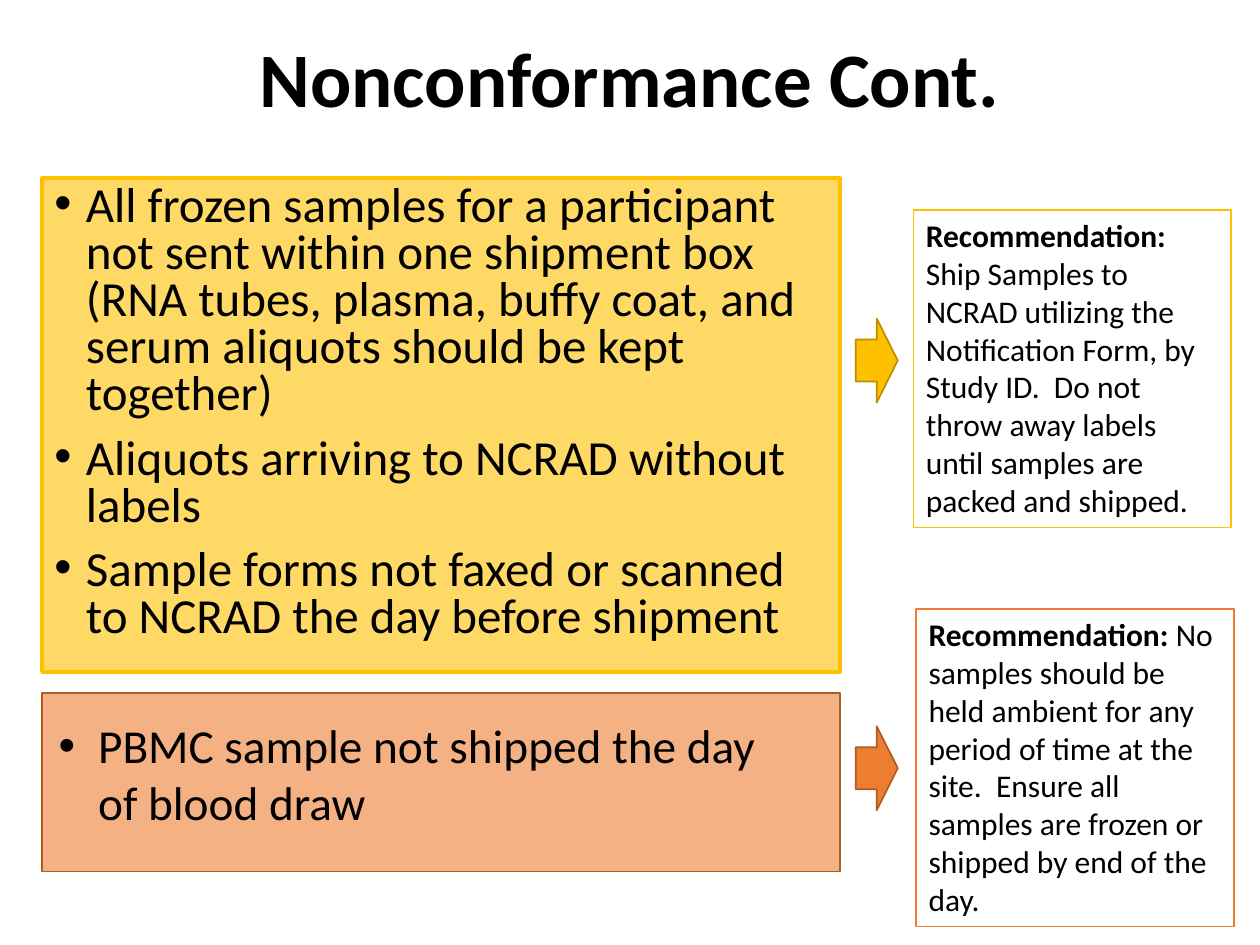
from lxml import etree
from pptx import Presentation, util as u
from pptx.dml.color import RGBColor
from pptx.enum import shapes, text
from pptx.oxml import ns

Pt = u.Pt
YELLOW, ORANGE, RUST = "FFC000", "ED7D31", "AF5C24"


def add_block(kind, left, top, width, height, fill=None, line=None, line_width=1):
    box = [Pt(value) for value in (left, top, width, height)]
    if kind is None:
        shape = slide.shapes.add_textbox(*box)
    else:
        shape = slide.shapes.add_shape(kind, *box)
        shape.shadow.inherit = False
        shape.fill.solid()
        shape.fill.fore_color.rgb = RGBColor.from_string(fill)
        shape.line.color.rgb = RGBColor.from_string(line)
        shape.line.width = Pt(line_width)
    shape.text_frame.word_wrap = True
    return shape


def write(shape, paragraphs, size, bold_lead="", align=text.PP_ALIGN.LEFT,
          anchor=text.MSO_ANCHOR.TOP, indent=0, spacing=1.0, space_before=0):
    frame = shape.text_frame
    frame.vertical_anchor = anchor
    for index, content in enumerate(paragraphs):
        paragraph = frame.add_paragraph() if index else frame.paragraphs[0]
        paragraph.alignment = align
        paragraph.line_spacing = spacing
        paragraph.space_before = Pt(space_before if index else 0)
        if indent:
            properties = paragraph._p.get_or_add_pPr()
            properties.set("marL", str(Pt(indent)))
            properties.set("indent", str(-Pt(indent)))
            etree.SubElement(properties, ns.qn("a:buFont")).set("typeface", "Arial")
            etree.SubElement(properties, ns.qn("a:buChar")).set("char", "•")
        for words, bold in ((bold_lead, True), (content, False)):
            if words:
                run = paragraph.add_run()
                run.text = words
                run.font.name = "Calibri"
                run.font.size = Pt(size)
                run.font.bold = bold
                run.font.color.rgb = RGBColor.from_string("000000")


presentation = Presentation()
presentation.slide_width, presentation.slide_height = Pt(720), Pt(540)
slide = presentation.slides.add_slide(presentation.slide_layouts[6])
rectangle = shapes.MSO_SHAPE.RECTANGLE

# Title
title = add_block(None, 36, 2, 648, 90)
write(title, [""], 44, bold_lead="Nonconformance Cont.", spacing=0.9,
      align=text.PP_ALIGN.CENTER, anchor=text.MSO_ANCHOR.MIDDLE)

# Shipment and labelling issues
issues = add_block(rectangle, 24, 102, 456, 282, "FFD966", YELLOW, 2.25)
write(issues, [
    "All frozen samples for a participant not sent within one shipment box "
    "(RNA tubes, plasma, buffy coat, and serum aliquots should be kept together)",
    "Aliquots arriving to NCRAD without labels",
    "Sample forms not faxed or scanned to NCRAD the day before shipment",
], 28, indent=18, spacing=0.8, space_before=10)

# Blood draw issue: panel with its text on top
add_block(rectangle, 24, 396, 456, 102, "F4B183", RUST)
blood_draw = add_block(None, 26.5, 406, 432, 94)
write(blood_draw, ["PBMC sample not shipped the day of blood draw"], 27, indent=22.5)

# Arrows and recommendations
recommendations = [
    (182, "BD8E00", YELLOW, 522, 120,
     "Ship Samples to NCRAD utilizing the Notification Form, by Study ID.  "
     "Do not throw away labels until samples are packed and shipped."),
    (415, RUST, ORANGE, 523.5, 348,
     "No samples should be held ambient for any period of time at the site.  "
     "Ensure all samples are frozen or shipped by end of the day."),
]
for arrow_top, arrow_line, color, left, top, advice in recommendations:
    add_block(shapes.MSO_SHAPE.RIGHT_ARROW, 489, arrow_top, 24, 48, color, arrow_line)
    recommendation = add_block(rectangle, left, top, 181.5, 181.5, "FFFFFF", color)
    write(recommendation, [advice], 18, bold_lead="Recommendation: ")

presentation.save("out.pptx")
